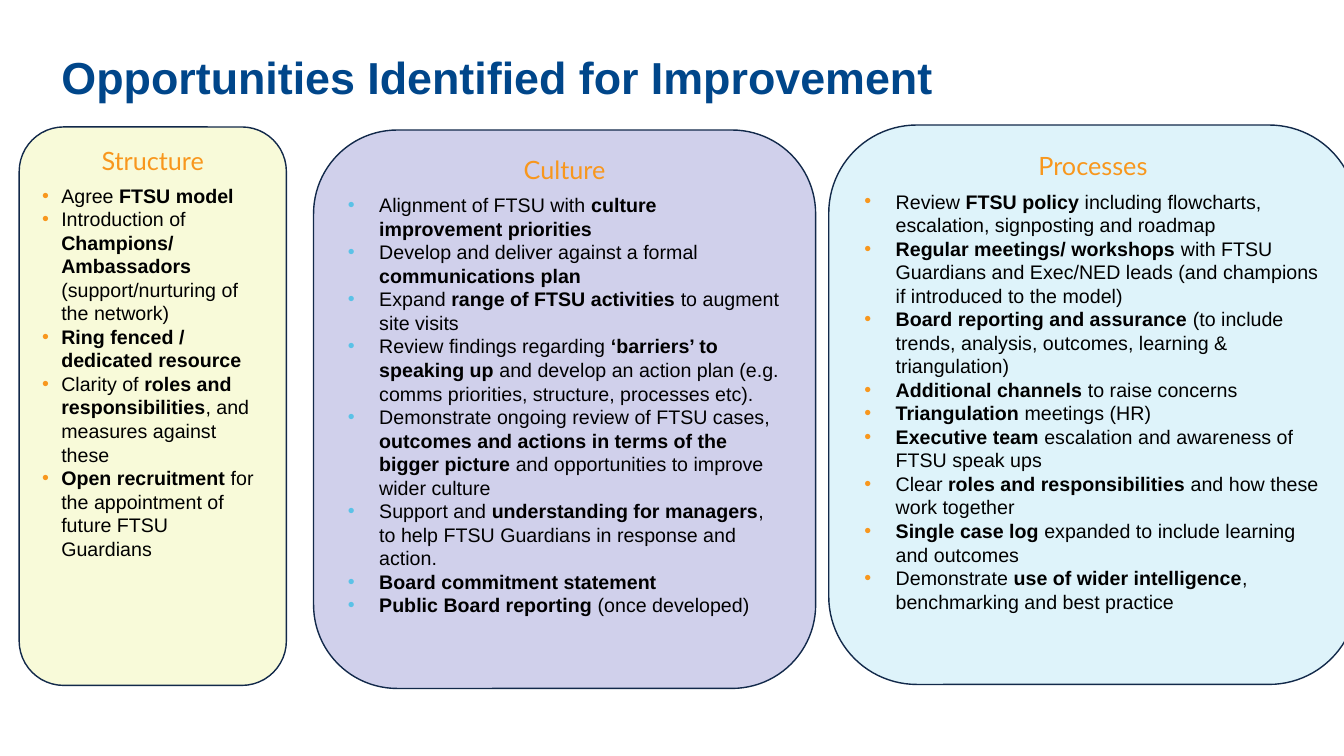
from lxml import etree
from pptx import Presentation
from pptx import util as u
from pptx.dml.color import RGBColor
from pptx.enum import shapes, text
from pptx.oxml.ns import qn

NAVY, ORANGE, CYAN = "00468A", "F8971D", "5BC2E7"


def paint(target, color):
    if hasattr(target, "solid"):
        target.solid()
        target = target.fore_color
    else:
        target = target.color
    target.rgb = RGBColor.from_string(color)


def write(para, words, size=14, font="Arial", color="000000", bold=False,
          align=text.PP_ALIGN.LEFT, after=0, line=None, bullet=None, indent=0):
    """Fill a paragraph; parts between ** marks are bold."""
    if bullet:
        props = para._p.get_or_add_pPr()
        props.set("marL", str(u.Inches(indent)))
        props.set("indent", str(-u.Inches(indent)))
        tint = etree.SubElement(props, qn("a:buClr"))
        etree.SubElement(tint, qn("a:srgbClr"), val=bullet)
        etree.SubElement(props, qn("a:buFont"), typeface="Arial")
        etree.SubElement(props, qn("a:buChar"), char="•")
    para.alignment = align
    para.space_before, para.space_after = u.Pt(0), u.Pt(after)
    if line:
        para.line_spacing = u.Pt(line)
    for i, part in enumerate(words.split("**")):
        if part:
            run = para.add_run()
            run.text = part
            run.font.size, run.font.name = u.Pt(size), font
            run.font.bold = bold or i % 2 == 1
            paint(run.font, color)


deck = Presentation()
deck.slide_width, deck.slide_height = u.Inches(13.33), u.Inches(7.5)
slide = deck.slides.add_slide(deck.slide_layouts[5])

# Title
title = slide.shapes.title
title.left, title.top = u.Inches(0.61), u.Inches(0.2)
title.width, title.height = u.Inches(10.23), u.Inches(1.12)
frame = title.text_frame
frame.margin_left = 0
frame.vertical_anchor = text.MSO_ANCHOR.MIDDLE
write(frame.paragraphs[0], "Opportunities Identified for Improvement",
      size=32, color=NAVY, bold=True)

# Panels: heading, place, fill, bullet colour, indent, top inset, points
panels = [
    ("Culture", (3.11, 1.29, 4.98, 5.54), "D0D0EB", CYAN, 0.31, 0, [
        "Alignment of FTSU with **culture improvement priorities**",
        "Develop and deliver against a formal **communications plan**",
        "Expand **range of FTSU activities **to augment site visits",
        "Review findings regarding **‘barriers’ to speaking up **and develop "
        "an action plan (e.g. comms priorities, structure, processes etc).",
        "Demonstrate ongoing review of FTSU cases, **outcomes and actions in "
        "terms of the bigger picture **and opportunities to improve wider culture",
        "Support and **understanding for managers**, to help FTSU Guardians "
        "in response and action.",
        "**Board commitment statement**",
        "**Public Board reporting **(once developed)",
    ]),
    ("Processes", (8.22, 1.24, 5.24, 5.55), "DEF3FA", ORANGE, 0.31, 0, [
        "Review **FTSU policy **including flowcharts, escalation, "
        "signposting and roadmap",
        "**Regular meetings/ workshops **with FTSU Guardians and Exec/NED "
        "leads (and champions if introduced to the model)",
        "**Board reporting and assurance **(to include trends, analysis, "
        "outcomes, learning & triangulation)",
        "**Additional channels **to raise concerns",
        "**Triangulation **meetings (HR)",
        "**Executive team **escalation and awareness of FTSU speak ups",
        "Clear **roles and responsibilities **and how these work together",
        "**Single case log **expanded to include learning and outcomes",
        "Demonstrate **use of wider intelligence**, benchmarking and best practice",
    ]),
    ("Structure", (0.19, 1.26, 2.65, 5.54), "F8FAD9", ORANGE, 0.19, 0.05, [
        "Agree **FTSU model**",
        "Introduction of **Champions/ Ambassadors **(support/nurturing of "
        "the network)",
        "**Ring fenced / dedicated resource**",
        "Clarity of **roles and responsibilities**, and measures against these",
        "**Open recruitment **for the appointment of future FTSU Guardians",
    ]),
]
for head, place, fill, dot, indent, inset, points in panels:
    panel = slide.shapes.add_shape(shapes.MSO_SHAPE.ROUNDED_RECTANGLE,
                                   *map(u.Inches, place))
    panel.shadow.inherit = False
    paint(panel.fill, fill)
    paint(panel.line, "12294A")
    panel.line.width = u.Pt(1)
    frame = panel.text_frame
    frame.word_wrap = True
    frame.vertical_anchor = text.MSO_ANCHOR.TOP
    frame.margin_top = u.Inches(inset)
    write(frame.paragraphs[0], head, size=18, font="Lato", color=ORANGE,
          align=text.PP_ALIGN.CENTER, after=6)
    for point in points:
        write(frame.add_paragraph(), point, line=16.8, bullet=dot, indent=indent)

deck.save("out.pptx")
